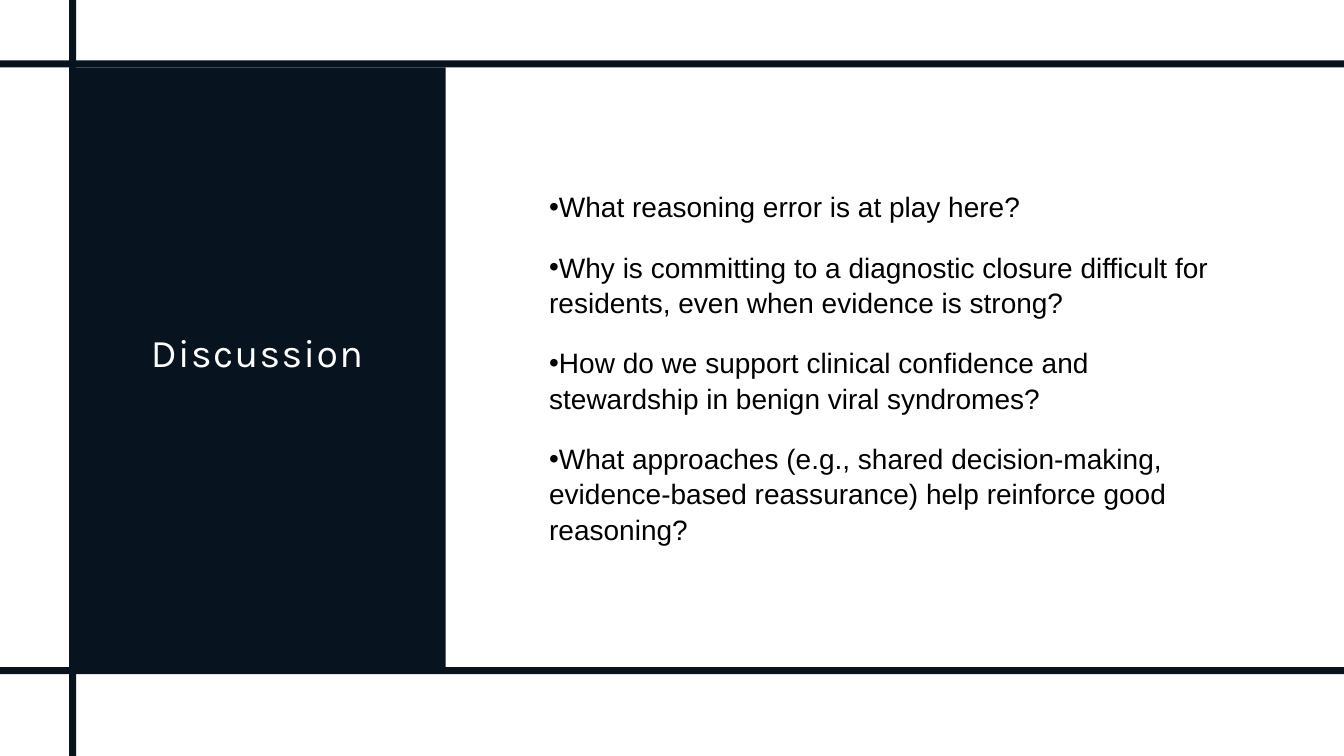
import pptx
import pptx.util
import pptx.dml.color
import pptx.enum.shapes
import pptx.enum.text
import pptx.oxml.ns
from lxml import etree

Cm, Pt = pptx.util.Cm, pptx.util.Pt
RGBColor = pptx.dml.color.RGBColor
PP_ALIGN = pptx.enum.text.PP_ALIGN
NAVY = RGBColor(0x07, 0x14, 0x20)
WHITE = RGBColor(0xFF, 0xFF, 0xFF)
BLACK = RGBColor(0, 0, 0)

WIDTH, HEIGHT, BAR = 33.87, 19.05, 0.18

prs = pptx.Presentation()
prs.slide_width, prs.slide_height = Cm(WIDTH), Cm(HEIGHT)
s = prs.slides.add_slide(prs.slide_layouts[6])


def add_text(box, lines, para_format, font_format, color):
    tf = s.shapes.add_textbox(*map(Cm, box)).text_frame
    tf.word_wrap = True
    tf.vertical_anchor = pptx.enum.text.MSO_ANCHOR.MIDDLE
    for i, line in enumerate(lines):
        p = tf.add_paragraph() if i else tf.paragraphs[0]
        for name, value in para_format.items():
            setattr(p, name, value)
        r = p.add_run()
        r.text = line
        for name, value in font_format.items():
            setattr(r.font, name, value)
        r.font.color.rgb = color
    return tf


# Title panel and the bars that cross the slide
for box in [
    (1.83, 1.7, 9.4, 15.11),
    (0, 1.52, WIDTH, BAR),
    (0, 16.81, WIDTH, BAR),
    (1.74, 0, BAR, HEIGHT),
]:
    sp = s.shapes.add_shape(pptx.enum.shapes.MSO_SHAPE.RECTANGLE, *map(Cm, box))
    sp.shadow.inherit = False
    sp.fill.solid()
    sp.fill.fore_color.rgb = NAVY
    sp.line.fill.background()

# Title with widened letter spacing
title = add_text(
    (3.66, 2.79, 5.64, 12.29),
    ["Discussion"],
    {"alignment": PP_ALIGN.CENTER, "line_spacing": 0.9},
    {"name": "Karla", "size": Pt(28)},
    WHITE,
)
title.margin_left = title.margin_right = 0
title.paragraphs[0].runs[0].font._element.set("spc", "100")

# Discussion questions
questions = add_text(
    (13.59, 3.3, 17.22, 11.89),
    [
        "What reasoning error is at play here?",
        "Why is committing to a diagnostic closure difficult for residents, even when evidence is strong?",
        "How do we support clinical confidence and stewardship in benign viral syndromes?",
        "What approaches (e.g., shared decision-making, evidence-based reassurance) help reinforce good reasoning?",
    ],
    {"alignment": PP_ALIGN.LEFT, "line_spacing": 1.05,
     "space_before": Pt(12), "space_after": Pt(6)},
    {"name": "Arial", "size": Pt(20)},
    BLACK,
)
for p in questions.paragraphs:
    pPr = p._p.get_or_add_pPr()
    pPr.set("marL", "0")
    pPr.set("indent", "0")
    etree.SubElement(pPr, pptx.oxml.ns.qn("a:buFont")).set("typeface", "Arial")
    etree.SubElement(pPr, pptx.oxml.ns.qn("a:buChar")).set("char", "•")

prs.save("out.pptx")
